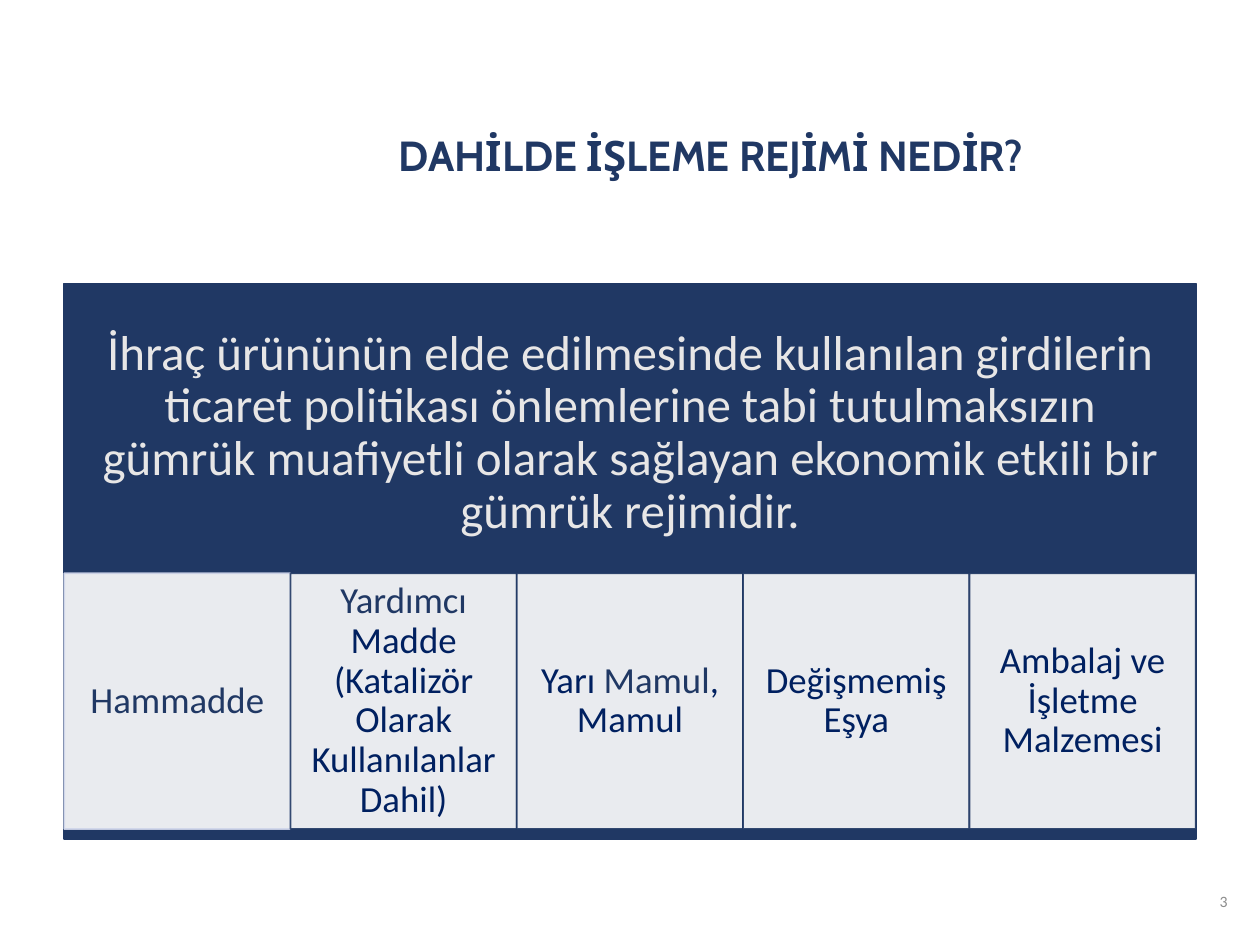
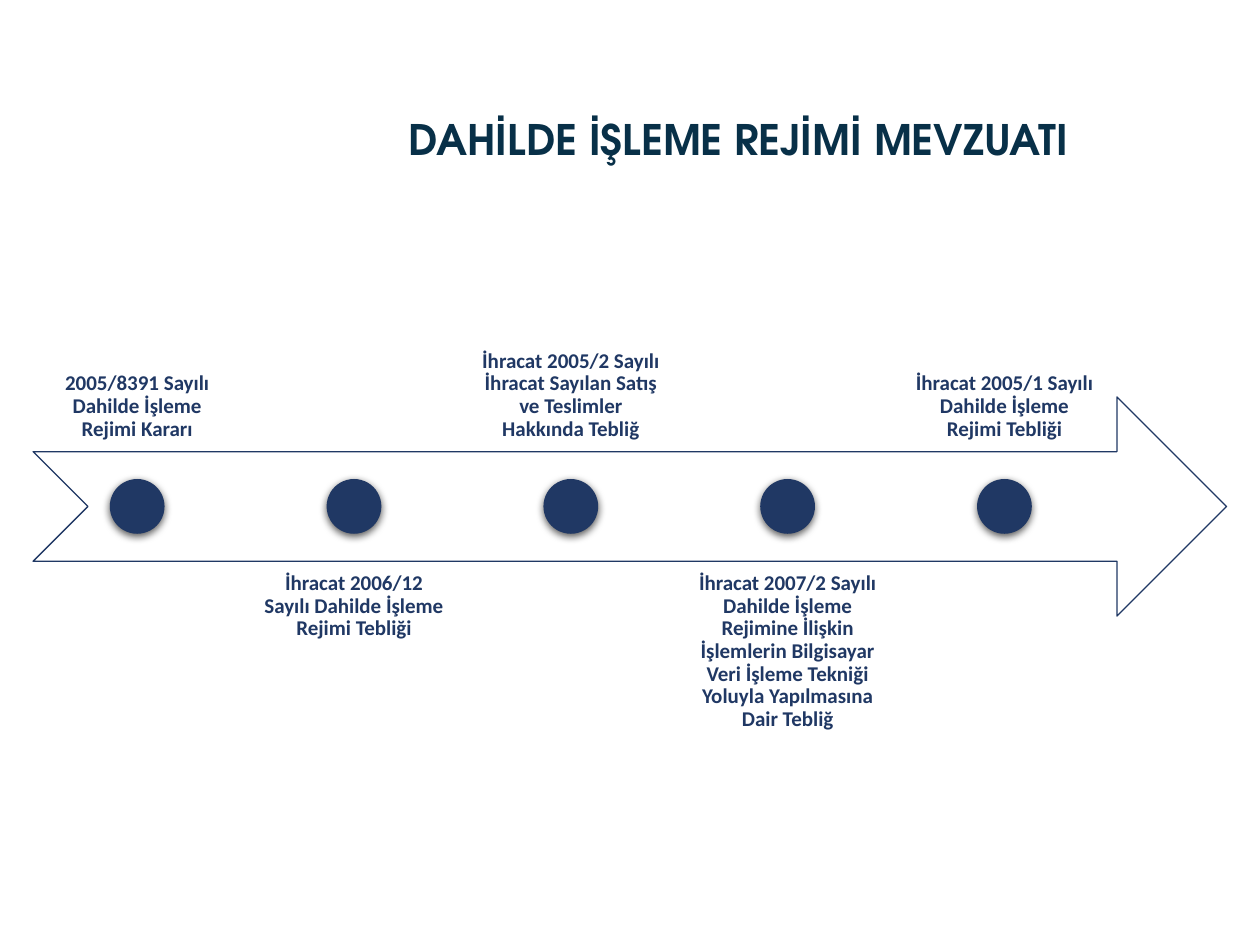
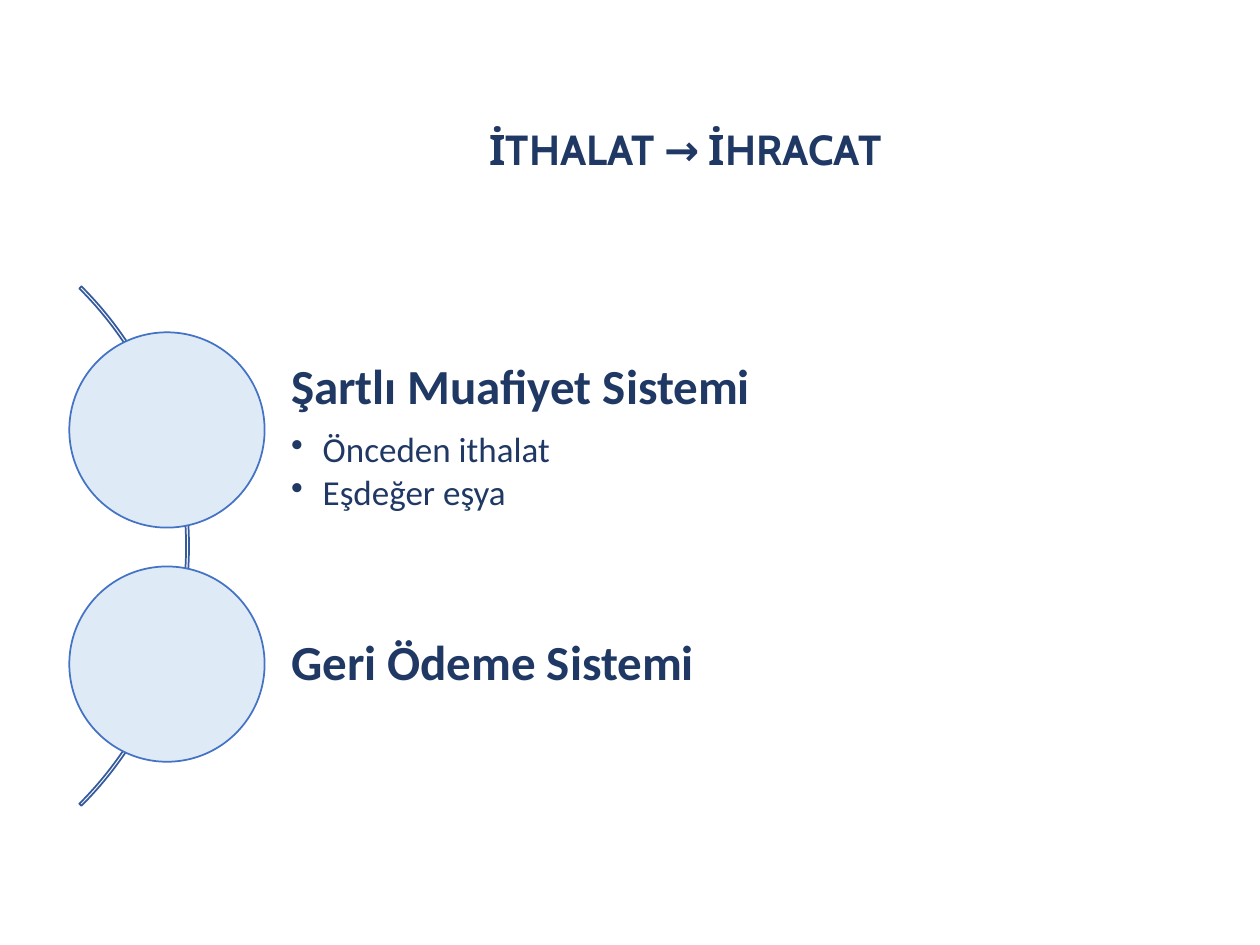
from lxml import etree
from pptx import Presentation
from pptx.dml.color import RGBColor
from pptx.enum.shapes import MSO_SHAPE
from pptx.enum.text import MSO_ANCHOR, PP_ALIGN
from pptx.oxml.ns import qn
from pptx.util import Pt

RECTANGLE, OVAL = MSO_SHAPE.RECTANGLE, MSO_SHAPE.OVAL
NOTCHED_ARROW, BLOCK_ARC = MSO_SHAPE.NOTCHED_RIGHT_ARROW, MSO_SHAPE.BLOCK_ARC
TOP, MIDDLE, BOTTOM = MSO_ANCHOR.TOP, MSO_ANCHOR.MIDDLE, MSO_ANCHOR.BOTTOM
LEFT, CENTER, RIGHT = PP_ALIGN.LEFT, PP_ALIGN.CENTER, PP_ALIGN.RIGHT


class Theme:
    navy = RGBColor.from_string("203864")
    deep_blue = RGBColor.from_string("002060")
    petrol = RGBColor.from_string("083048")
    arc_blue = RGBColor.from_string("365B9D")
    ring_blue = RGBColor.from_string("4472C4")
    pale_blue = RGBColor.from_string("DEEBF7")
    pale_border = RGBColor.from_string("CFD5EA")
    light_gray = RGBColor.from_string("E7E6E6")
    page_gray = RGBColor.from_string("8C8C8C")
    white = RGBColor.from_string("FFFFFF")
    body_font, title_font, alternate_font = "Calibri", "Cabin", "TeX Gyre Adventor"
    title_size, statement_size, heading_size = Pt(24), Pt(28), Pt(28)
    cell_size, bullet_size, label_size, page_size = Pt(21), Pt(20), Pt(12), Pt(9)


def add_box(slide, kind, frame, fill=None, line=None, line_width=1):
    """Add a preset shape, or a text box when kind is None."""
    left, top, width, height = map(Pt, frame)
    if kind is None:
        return slide.shapes.add_textbox(left, top, width, height)
    shape = slide.shapes.add_shape(kind, left, top, width, height)
    shape.shadow.inherit = False
    for target, color in ((shape.fill, fill), (shape.line.fill, line)):
        if color is None:
            target.background()
        else:
            target.solid()
            target.fore_color.rgb = color
    if line is not None:
        shape.line.width = Pt(line_width)
    return shape


def write(shape, paragraphs, size, color=Theme.navy, bold=False, font=Theme.body_font,
          align=CENTER, anchor=MIDDLE, insets=(7.2, 3.6, 7.2, 3.6)):
    """Fill a shape; each paragraph is a list of (text, font overrides)."""
    frame = shape.text_frame
    frame_format = {"word_wrap": True, "vertical_anchor": anchor}
    for side, inset in zip(("left", "top", "right", "bottom"), insets):
        frame_format[f"margin_{side}"] = Pt(inset)
    for name, value in frame_format.items():
        setattr(frame, name, value)
    for index, runs in enumerate(paragraphs):
        paragraph = frame.add_paragraph() if index else frame.paragraphs[0]
        paragraph.alignment, paragraph.line_spacing = align, 0.9
        for text, overrides in runs:
            run = paragraph.add_run()
            run.text = text
            run_format = {"size": size, "color": color, "bold": bold, "name": font, **overrides}
            run.font.color.rgb = run_format.pop("color")
            for name, value in run_format.items():
                setattr(run.font, name, value)


presentation = Presentation()
presentation.slide_width, presentation.slide_height = Pt(720), Pt(540)

# Slides and their titles: text, left, top, font, colour
titles = [
    ("DAHİLDE İŞLEME REJİMİ NEDİR?", 127, 38.2, Theme.title_font, Theme.navy),
    ("DAHİLDE İŞLEME REJİMİ MEVZUATI", 142.6, 28.8, Theme.alternate_font, Theme.petrol),
    ("İTHALAT → İHRACAT", 112.3, 34.6, Theme.title_font, Theme.navy),
]
slides = []
for text, left, top, font, color in titles:
    slide = presentation.slides.add_slide(presentation.slide_layouts[6])
    title = add_box(slide, None, (left, top, 558.7, 104.4))
    write(title, [[(text, {})]], Theme.title_size, color, True, font)
    slides.append(slide)
definition_slide, legislation_slide, system_slide = slides

# Definition: page number and statement panel
page_number = add_box(definition_slide, None, (546.5, 501.1, 162, 28.8))
write(page_number, [[("3", {})]], Theme.page_size, Theme.page_gray, align=RIGHT)
panel_left, panel_top, panel_width = 36.7, 162, 646.6
add_box(definition_slide, RECTANGLE, (panel_left, panel_top, panel_width, 317.5),
        Theme.navy, Theme.navy)
statement = add_box(definition_slide, None, (panel_left, panel_top, panel_width, 171.4))
write(statement, [[("İhraç ürününün elde edilmesinde kullanılan girdilerin ticaret politikası "
                    "önlemlerine tabi tutulmaksızın gümrük muafiyetli olarak sağlayan ekonomik "
                    "etkili bir gümrük rejimidir.", {})]],
      Theme.statement_size, Theme.light_gray, insets=(15.8,) * 4)

# Definition: row of input kinds
navy_run = {"color": Theme.navy}
input_kinds = [
    [("Hammadde", navy_run)],
    [("Yardımcı", navy_run), (" Madde (Katalizör Olarak Kullanılanlar Dahil)", {})],
    [("Yarı ", {}), ("Mamul", navy_run), (", Mamul", {})],
    [("Değişmemiş Eşya", {})],
    [("Ambalaj ve İşletme Malzemesi", {})],
]
cell_width = panel_width / len(input_kinds)
for index, runs in enumerate(input_kinds):
    cell = add_box(definition_slide, RECTANGLE,
                   (panel_left + index * cell_width, 327.6, cell_width, 146.2),
                   Theme.white, Theme.navy if index else Theme.pale_border)
    for color_element in cell._element.spPr.iter(qn("a:srgbClr")):
        etree.SubElement(color_element, qn("a:alpha"), val="90000")
    write(cell, [runs], Theme.cell_size, Theme.deep_blue, insets=(11.5, 2.2, 11.5, 2.2))

# Legislation: timeline arrow with labels alternating above and below
add_box(legislation_slide, NOTCHED_ARROW, (18.9, 226.8, 682, 125.3),
        Theme.white, Theme.navy, 0.75)
regulations = [
    "2005/8391 Sayılı Dahilde İşleme Rejimi Kararı",
    "İhracat 2006/12 Sayılı Dahilde İşleme Rejimi Tebliği",
    "İhracat 2005/2 Sayılı İhracat Sayılan Satış ve Teslimler Hakkında Tebliğ",
    "İhracat 2007/2 Sayılı Dahilde İşleme Rejimine İlişkin İşlemlerin Bilgisayar "
    "Veri İşleme Tekniği Yoluyla Yapılmasına Dair Tebliğ",
    "İhracat 2005/1 Sayılı Dahilde İşleme Rejimi Tebliği",
]
label_width, label_height, dot_size, arrow_middle = 118, 125.3, 31.3, 289.4
for index, regulation in enumerate(regulations):
    center = 78.4 + index * 123.9
    label_top, anchor = (320.4, TOP) if index % 2 else (133.2, BOTTOM)
    label = add_box(legislation_slide, None,
                    (center - label_width / 2, label_top, label_width, label_height))
    write(label, [[(regulation, {})]], Theme.label_size, bold=True,
          anchor=anchor, insets=(6.7,) * 4)
    dot = add_box(legislation_slide, OVAL,
                  (center - dot_size / 2, arrow_middle - dot_size / 2, dot_size, dot_size),
                  Theme.navy)
    effects = dot._element.spPr.find(qn("a:effectLst"))
    shadow = etree.SubElement(effects, qn("a:outerShdw"), blurRad=str(Pt(4.5)),
                              dist=str(Pt(1.5)), dir="5400000", rotWithShape="0")
    shadow_color = etree.SubElement(shadow, qn("a:srgbClr"), val="000000")
    etree.SubElement(shadow_color, qn("a:alpha"), val="63000")

# Systems: arc behind two circles with their texts
arc = add_box(system_slide, BLOCK_ARC, (-311.8, 102.2, 419.8, 419.8), line=Theme.arc_blue)
for index, value in enumerate((189, 27, 0.004)):
    arc.adjustments[index] = value
systems = [
    ("Şartlı Muafiyet Sistemi", ["Önceden ithalat", "Eşdeğer eşya"], TOP),
    ("Geri Ödeme Sistemi", [], MIDDLE),
]
circle_size, text_height = 111.6, 89.3
for index, (heading, points, anchor) in enumerate(systems):
    middle = 245.7 + index * 133.8
    system = add_box(system_slide, RECTANGLE,
                     (95.8, middle - text_height / 2, 614.2, text_height),
                     Theme.white, Theme.white)
    point_format = {"size": Theme.bullet_size, "bold": False}
    write(system, [[(heading, {})]] + [[(point, point_format)] for point in points],
          Theme.heading_size, bold=True, align=LEFT, anchor=anchor,
          insets=(70.6, 5.8, 5.8, 5.8))
    heading_paragraph, *point_paragraphs = system.text_frame.paragraphs
    if point_paragraphs:
        heading_paragraph.space_after = Pt(9.8)
    for paragraph in point_paragraphs:
        paragraph.space_after = Pt(3)
        properties = paragraph._p.get_or_add_pPr()
        properties.set("marL", str(Pt(18)))
        properties.set("indent", str(-Pt(18)))
        etree.SubElement(properties, qn("a:buChar"), char="•")
    add_box(system_slide, OVAL,
            (39.6, middle - circle_size / 2, circle_size, circle_size),
            Theme.pale_blue, Theme.ring_blue)

presentation.save("out.pptx")
